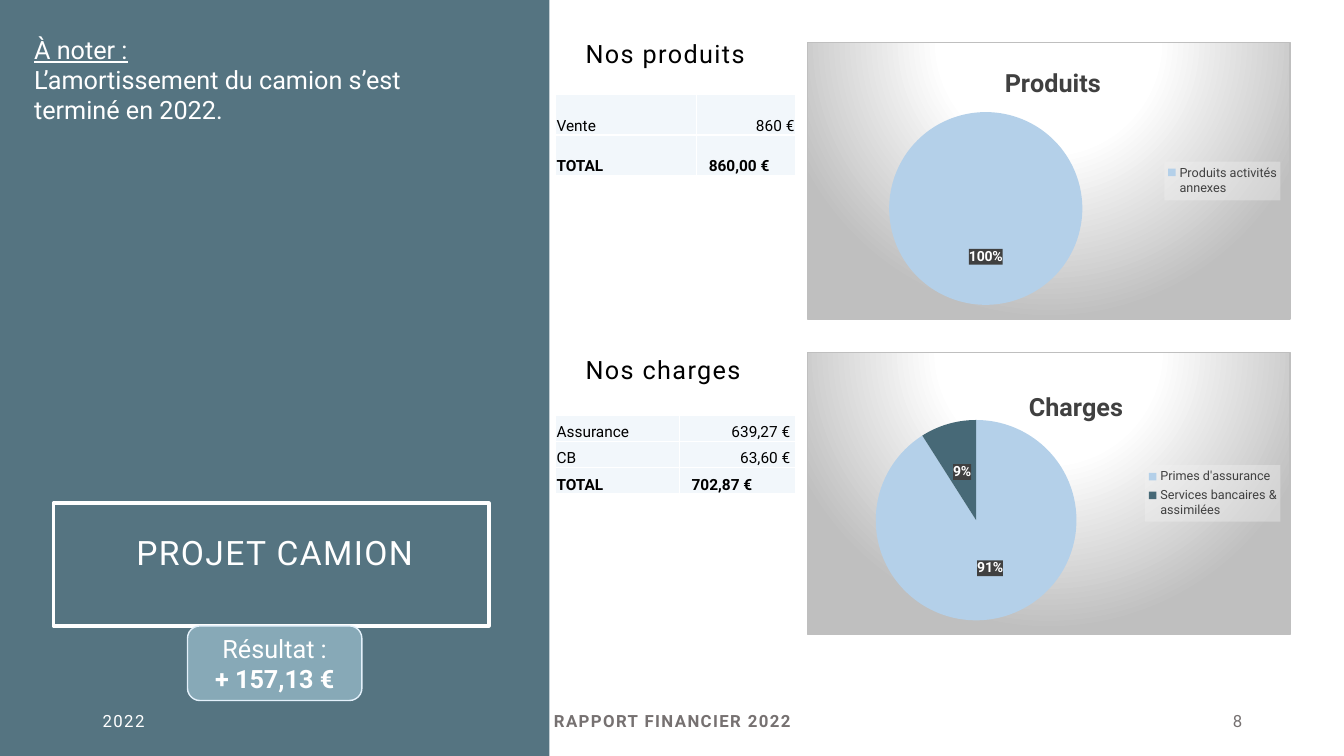
from dataclasses import dataclass

from lxml import etree
from pptx import Presentation
from pptx import util as u
from pptx.chart.data import CategoryChartData
from pptx.dml.color import RGBColor
from pptx.enum import chart as charts, shapes, text
from pptx.oxml import parse_xml
from pptx.oxml.ns import nsdecls, qn

PX = u.Inches(1) // 100
LEFT, CENTER, RIGHT = text.PP_ALIGN.LEFT, text.PP_ALIGN.CENTER, text.PP_ALIGN.RIGHT
MIDDLE, TOP = text.MSO_ANCHOR.MIDDLE, text.MSO_ANCHOR.TOP


@dataclass(frozen=True)
class Theme:
    """Colours, font and type sizes of the slide."""

    font: str = "Roboto"
    teal: str = "476977"
    badge: str = "87A9B7"
    badge_line: str = "E4F1FB"
    sky: str = "B4D0E9"
    cell: str = "F2F7FB"
    white: str = "FFFFFF"
    black: str = "000000"
    grey: str = "767171"
    dark: str = "404040"
    silver: str = "BFBFBF"
    legend: str = "F2F2F2"
    title: int = 24
    body: int = 18
    footer: int = 12
    table: int = 11
    label: int = 10
    key: int = 9


THEME = Theme()


def px(*lengths):
    """Turn px lengths into EMU."""
    return [u.Emu(length * PX) for length in lengths]


def style_font(font, size, color, bold=False, underline=None):
    """Set the face, size, colour and emphasis of a font."""
    font.name, font.size, font.bold = THEME.font, u.Pt(size), bold
    font.underline = underline
    font.color.rgb = RGBColor.from_string(color)


def write(paragraph, content, size=THEME.body, color=THEME.white, bold=False,
          underline=None, align=LEFT, line_spacing=None, spacing=0):
    """Write one formatted run into a paragraph."""
    run = paragraph.add_run()
    run.text = content
    style_font(run.font, size, color, bold, underline)
    if spacing:
        run.font._element.set("spc", str(spacing * 100))
    paragraph.alignment = align
    if line_spacing:
        paragraph.line_spacing = line_spacing


def add_text(slide, box, content, anchor=MIDDLE, **style):
    """Add a wrapping text box with one paragraph and return its frame."""
    frame = slide.shapes.add_textbox(*px(*box)).text_frame
    frame.word_wrap, frame.vertical_anchor = True, anchor
    write(frame.paragraphs[0], content, **style)
    return frame


def add_panel(slide, kind, box, fill=None, line=None, width=1, opacity=100):
    """Add a preset shape without shadow and return it."""
    shape = slide.shapes.add_shape(kind, *px(*box))
    shape.shadow.inherit = False
    if fill:
        shape.fill.solid()
        shape.fill.fore_color.rgb = RGBColor.from_string(fill)
        if opacity < 100:
            color = shape._element.spPr.find(qn("a:solidFill"))[0]
            etree.SubElement(color, qn("a:alpha"), val=str(opacity * 1000))
    else:
        shape.fill.background()
    if line:
        shape.line.color.rgb = RGBColor.from_string(line)
        shape.line.width = u.Pt(width)
    else:
        shape.line.fill.background()
    return shape


def style_cell(cell, left=1, right=1):
    """Give a cell its fill, margins, anchor and white borders."""
    cell.margin_left, cell.margin_right, cell.margin_top, cell.margin_bottom = px(left, right, 1, 0)
    cell.vertical_anchor = text.MSO_ANCHOR.BOTTOM
    cell.fill.solid()
    cell.fill.fore_color.rgb = RGBColor.from_string(THEME.cell)
    properties = cell._tc.get_or_add_tcPr()
    for position, side in enumerate(("lnL", "lnR", "lnT", "lnB")):
        properties.insert(position, parse_xml(
            f'<a:{side} {nsdecls("a")} w="12700"><a:solidFill>'
            f'<a:srgbClr val="{THEME.white}"/></a:solidFill></a:{side}>'))


def add_amounts(slide, box, columns, rows, indent):
    """Add a table of labels and amounts whose last row is the total."""
    table = slide.shapes.add_table(len(rows), 2, *px(*box)).table
    table.first_row = table.horz_banding = False
    for column, width in zip(table.columns, px(*columns)):
        column.width = width
    for index, (label, amount) in enumerate(rows):
        total = index == len(rows) - 1
        style_cell(table.cell(index, 0))
        style_cell(table.cell(index, 1), left=12 if total else 1, right=indent)
        for column, content in enumerate((label, amount)):
            write(table.cell(index, column).text_frame.paragraphs[0], content,
                  size=THEME.table, color=THEME.black, bold=total,
                  align=RIGHT if column and not total else LEFT)


def place(element, position, percents, inner=False):
    """Give a chart part a manual layout in percent of the chart."""
    for layout in element.findall(qn("c:layout")):
        element.remove(layout)
    target = '<c:layoutTarget val="inner"/>' if inner else ""
    modes = '<c:xMode val="edge"/><c:yMode val="edge"/>'
    values = "".join(f'<c:{name} val="{percent / 100}"/>' for name, percent in zip("xywh", percents))
    element.insert(position, parse_xml(
        f'<c:layout {nsdecls("c")}><c:manualLayout>{target}{modes}{values}</c:manualLayout></c:layout>'))


def paint(element, paint_xml):
    """Put shape properties before the text properties of a chart part."""
    element.find(qn("c:txPr")).addprevious(parse_xml(
        f'<c:spPr {nsdecls("c", "a")}>{paint_xml}</c:spPr>'))


def solid(color, opacity=100):
    """Return the XML of a solid fill."""
    return (f'<a:solidFill><a:srgbClr val="{color}"><a:alpha val="{opacity * 1000}"/>'
            '</a:srgbClr></a:solidFill>')


def glow():
    """Return the XML of the radial chart background and its border."""
    stops = "".join(f'<a:gs pos="{percent * 1000}"><a:srgbClr val="{color}"/></a:gs>' for percent, color
                    in ((0, THEME.white), (39, THEME.white), (100, THEME.silver)))
    return (f'<a:gradFill><a:gsLst>{stops}</a:gsLst><a:path path="circle">'
            '<a:fillToRect l="50000" t="-80000" r="50000" b="180000"/></a:path></a:gradFill>'
            f'<a:ln w="9525">{solid(THEME.silver)}</a:ln>')


def add_pie(slide, box, title, shares, title_at, plot_at, legend_at):
    """Add a pie chart of percentage shares with title and legend."""
    data = CategoryChartData()
    data.categories = list(shares)
    data.add_series("Series 1", list(shares.values()))
    chart = slide.shapes.add_chart(charts.XL_CHART_TYPE.PIE, *px(*box), data).chart
    style_font(chart.font, THEME.label, THEME.black)
    paint(chart._chartSpace, glow())

    chart.has_title = True
    write(chart.chart_title.text_frame.paragraphs[0], title,
          color=THEME.dark, bold=True, align=CENTER)
    place(chart.chart_title._element, 1, title_at)

    chart.has_legend = True
    legend = chart.legend
    legend.position = charts.XL_LEGEND_POSITION.RIGHT
    legend.include_in_layout = False
    style_font(legend.font, THEME.key, THEME.dark)
    paint(legend._element, solid(THEME.legend, 39))
    place(legend._element, 1, legend_at)

    plot = chart.plots[0]
    plot.vary_by_categories = True
    place(chart._chartSpace.chart.plotArea, 0, plot_at, inner=True)
    for index, color in zip(range(len(shares)), (THEME.sky, THEME.teal)):
        fill = plot.series[0].points[index].format.fill
        fill.solid()
        fill.fore_color.rgb = RGBColor.from_string(color)
    labels = plot.series[0].data_labels
    labels.show_percentage, labels.show_value = True, False
    labels.number_format, labels.number_format_is_linked = "0%", False
    labels.position = charts.XL_LABEL_POSITION.CENTER
    style_font(labels.font, THEME.label, THEME.white, bold=True)
    paint(labels._element, solid(THEME.dark, 90))


def main():
    """Build the slide and save it."""
    presentation = Presentation()
    presentation.slide_width, presentation.slide_height = px(1333, 750)
    slide = presentation.slides.add_slide(presentation.slide_layouts[6])
    kinds = shapes.MSO_SHAPE

    panel = add_panel(slide, kinds.RECTANGLE, (0, 0, 545, 750), fill=THEME.teal, opacity=92)
    frame = panel.text_frame
    frame.margin_top, frame.vertical_anchor = px(355)[0], MIDDLE
    write(frame.paragraphs[0], "PROJET CAMION", size=THEME.title, align=CENTER,
          line_spacing=0.9, spacing=1)
    add_panel(slide, kinds.RECTANGLE, (53, 499, 432, 122), line=THEME.white, width=2.25)

    footer = {"size": THEME.footer, "spacing": 1}
    add_text(slide, (92, 695, 300, 40), "2022", **footer)
    add_text(slide, (442, 695, 450, 40), "RAPPORT FINANCIER 2022",
             color=THEME.grey, bold=True, align=CENTER, **footer)
    add_text(slide, (942, 695, 300, 40), "8", color=THEME.grey, align=RIGHT, **footer)
    for top, heading in ((15, "Nos produits"), (328, "Nos charges")):
        add_text(slide, (571, top, 641, 47), heading, color=THEME.black, line_spacing=2.0, spacing=1)

    add_amounts(slide, (551, 94, 238, 80), (140, 98),
                (("Vente", "860 €"), ("TOTAL", "860,00 €")), indent=1)
    add_amounts(slide, (551, 412, 238, 78), (123, 115),
                (("Assurance", "639,27 €"), ("CB", "63,60 €"), ("TOTAL", "702,87 €")), indent=5)

    note = add_text(slide, (24, 29, 474, 131), "À noter :", anchor=TOP, underline=True)
    write(note.add_paragraph(), "L’amortissement du camion s’est terminé en 2022.")

    badge = add_panel(slide, kinds.ROUNDED_RECTANGLE, (186, 621, 173, 74),
                      fill=THEME.badge, line=THEME.badge_line).text_frame
    badge.vertical_anchor = MIDDLE
    write(badge.paragraphs[0], "Résultat :", align=CENTER)
    write(badge.add_paragraph(), "+ 157,13 €", bold=True, align=CENTER)

    add_pie(slide, (800, 349, 480, 281), "Charges",
            {"Primes d'assurance": 91, "Services bancaires & assimilées": 9},
            (45, 12), (14, 24, 42, 71), (70, 40, 28, 20))
    add_pie(slide, (800, 42, 480, 275), "Produits", {"Produits activités annexes": 100},
            (40, 7), (17, 25, 40, 70), (74, 43, 24, 14))
    presentation.save("out.pptx")


if __name__ == "__main__":
    main()
